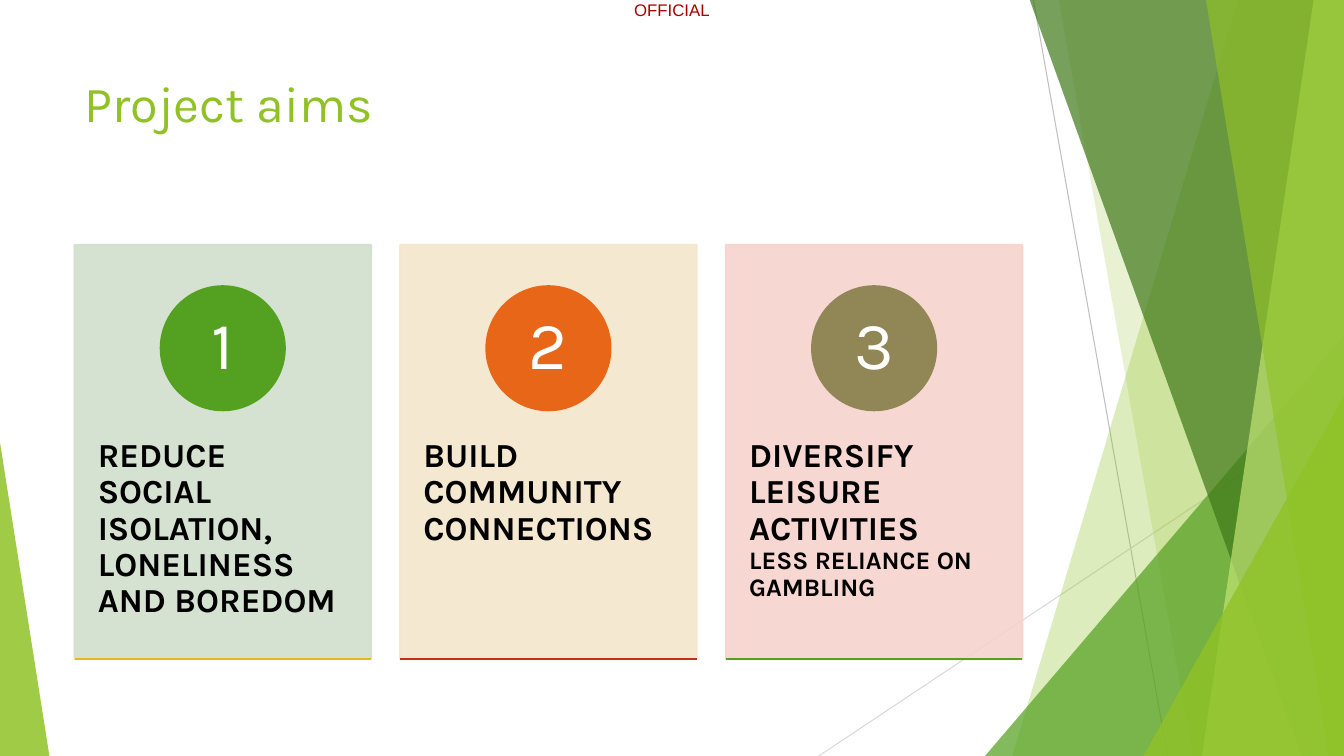
from dataclasses import dataclass

from lxml.etree import SubElement
from pptx import Presentation
from pptx.dml.color import RGBColor
from pptx.enum.shapes import MSO_CONNECTOR, MSO_SHAPE
from pptx.enum.text import MSO_ANCHOR, PP_ALIGN
from pptx.oxml.ns import qn
from pptx.util import Inches, Pt


@dataclass(frozen=True)
class Theme:
    font: str = "Karla"
    label_font: str = "Arial"
    lime: str = "90C226"
    green: str = "54A021"
    dark_green: str = "3F7819"
    pale_lime: str = "C0E474"
    gray: str = "BFBFBF"
    light_gray: str = "D9D9D9"
    red: str = "A80000"
    black: str = "000000"
    white: str = "FFFFFF"
    label_size: int = 12
    title_size: int = 36
    number_size: int = 48
    aim_size: int = 24
    detail_size: int = 18


THEME = Theme()
WIDTH, HEIGHT = 13.33, 7.5
CARD_LEFT, CARD_TOP, CARD_WIDTH, CARD_HEIGHT = 0.74, 2.43, 2.94, 4.11
CARD_PITCH = 3.23
CIRCLE = 1.23

AIMS = [
    ("REDUCE SOCIAL ISOLATION, LONELINESS AND BOREDOM", "D1DFCD", THEME.green, "E6B91E"),
    ("BUILD COMMUNITY CONNECTIONS", "F5E6CD", "E76618", "C42F1A"),
    ("DIVERSIFY LEISURE ACTIVITIES\vLESS RELIANCE ON GAMBLING", "F6D3CC", "918655", THEME.green),
]


def paint(fill, color, opacity=100):
    fill.solid()
    fill.fore_color.rgb = RGBColor.from_string(color)
    if opacity < 100:
        clr = fill._xPr.find(qn("a:solidFill"))[0]
        SubElement(clr, qn("a:alpha")).set("val", str(opacity * 1000))


def style_shape(s, color, opacity=100, outline=False):
    s.shadow.inherit = False
    paint(s.fill, color, opacity)
    if outline:
        s.line.width = Pt(1.5)
        paint(s.line.fill, color, opacity)
    else:
        s.line.fill.background()


def add_preset(slide, kind, box, color, opacity=100, outline=False):
    s = slide.shapes.add_shape(kind, *map(Inches, box))
    style_shape(s, color, opacity, outline)
    return s


def add_triangle(slide, box, apex, color, opacity):
    s = add_preset(slide, MSO_SHAPE.ISOSCELES_TRIANGLE, box, color, opacity)
    s.adjustments[0] = apex


def add_right_panel(slide, top_x, bottom_x, color, opacity):
    top = -0.01
    corners = [(WIDTH, top), (WIDTH, HEIGHT), (bottom_x, HEIGHT)]
    builder = slide.shapes.build_freeform(Inches(top_x), Inches(top))
    builder.add_line_segments([(Inches(x), Inches(y)) for x, y in corners])
    style_shape(builder.convert_to_shape(), color, opacity)


def add_line(slide, ends, color, width):
    s = slide.shapes.add_connector(MSO_CONNECTOR.STRAIGHT, *map(Inches, ends))
    s.line.width = Pt(width)
    s.line.color.rgb = RGBColor.from_string(color)
    SubElement(s._element.spPr, qn("a:effectLst"))


def write(s, text, size, color, insets=(0.1, 0.05), font=THEME.font, bold=False, wrap=True):
    tf = s.text_frame
    tf.word_wrap = wrap
    tf.margin_left = tf.margin_right = Inches(insets[0])
    tf.margin_top = tf.margin_bottom = Inches(insets[1])
    p = tf.paragraphs[0]
    p.text = text
    for r in p.runs:
        r.font.name = font
        r.font.size = Pt(size)
        r.font.bold = bold
        r.font.color.rgb = RGBColor.from_string(color)
    return p


def add_text(slide, box, text, size, color, **options):
    sp = slide.shapes.add_textbox(*map(Inches, box))
    return write(sp, text, size, color, **options)


def add_background(slide):
    add_line(slide, (10.25, 0, 11.58, HEIGHT), THEME.gray, 0.75)
    add_line(slide, (WIDTH, 4.03, 8.12, HEIGHT), THEME.light_gray, 0.75)
    add_right_panel(slide, 12.28, 10.04, THEME.lime, 30)
    add_right_panel(slide, 10.5, 11.83, THEME.lime, 20)
    add_triangle(slide, (9.77, 3.33, 3.56, 4.17), 1, THEME.green, 72)
    add_right_panel(slide, 10.21, 12.91, THEME.dark_green, 70)
    add_right_panel(slide, 13.03, 11.92, THEME.pale_lime, 70)
    add_right_panel(slide, 11.96, 13.18, THEME.lime, 65)
    add_triangle(slide, (11.34, 3.93, 1.99, 3.57), 1, THEME.lime, 80)
    add_triangle(slide, (0, 4.39, 0.49, 3.11), 0, THEME.lime, 85)


def add_card(slide, index, aim, tint, accent, underline):
    left = CARD_LEFT + index * CARD_PITCH
    bottom = CARD_TOP + CARD_HEIGHT
    add_preset(slide, MSO_SHAPE.RECTANGLE, (left, CARD_TOP, CARD_WIDTH, CARD_HEIGHT),
               tint, 90, outline=True)

    p = add_text(slide, (left, 3.99, CARD_WIDTH, 2.47), aim, THEME.aim_size, THEME.black,
                 insets=(0.23, 0.36), bold=True)
    p.line_spacing = 0.9
    for r in p.runs[1:]:
        r.font.size = Pt(THEME.detail_size)

    circle_left = left + (CARD_WIDTH - CIRCLE) / 2
    s = add_preset(slide, MSO_SHAPE.OVAL, (circle_left, 2.84, CIRCLE, CIRCLE),
                   accent, outline=True)
    p = write(s, str(index + 1), THEME.number_size, THEME.white, insets=(0.1, 0.01), wrap=False)
    p.alignment = PP_ALIGN.CENTER
    p.line_spacing = 0.9
    s.text_frame.vertical_anchor = MSO_ANCHOR.MIDDLE

    add_line(slide, (left, bottom, left + CARD_WIDTH, bottom), underline, 1.5)


def main():
    prs = Presentation()
    prs.slide_width, prs.slide_height = Inches(WIDTH), Inches(HEIGHT)
    slide = prs.slides.add_slide(prs.slide_layouts[6])
    add_background(slide)
    add_text(slide, (6.29, 0, 0.8, 0.2), "OFFICIAL", THEME.label_size, THEME.red,
             insets=(0, 0), font=THEME.label_font, wrap=False)
    add_text(slide, (0.74, 0.67, 9.4, 1.44), "Project aims", THEME.title_size, THEME.lime)
    for index, aim in enumerate(AIMS):
        add_card(slide, index, *aim)
    prs.save("out.pptx")


if __name__ == "__main__":
    main()
